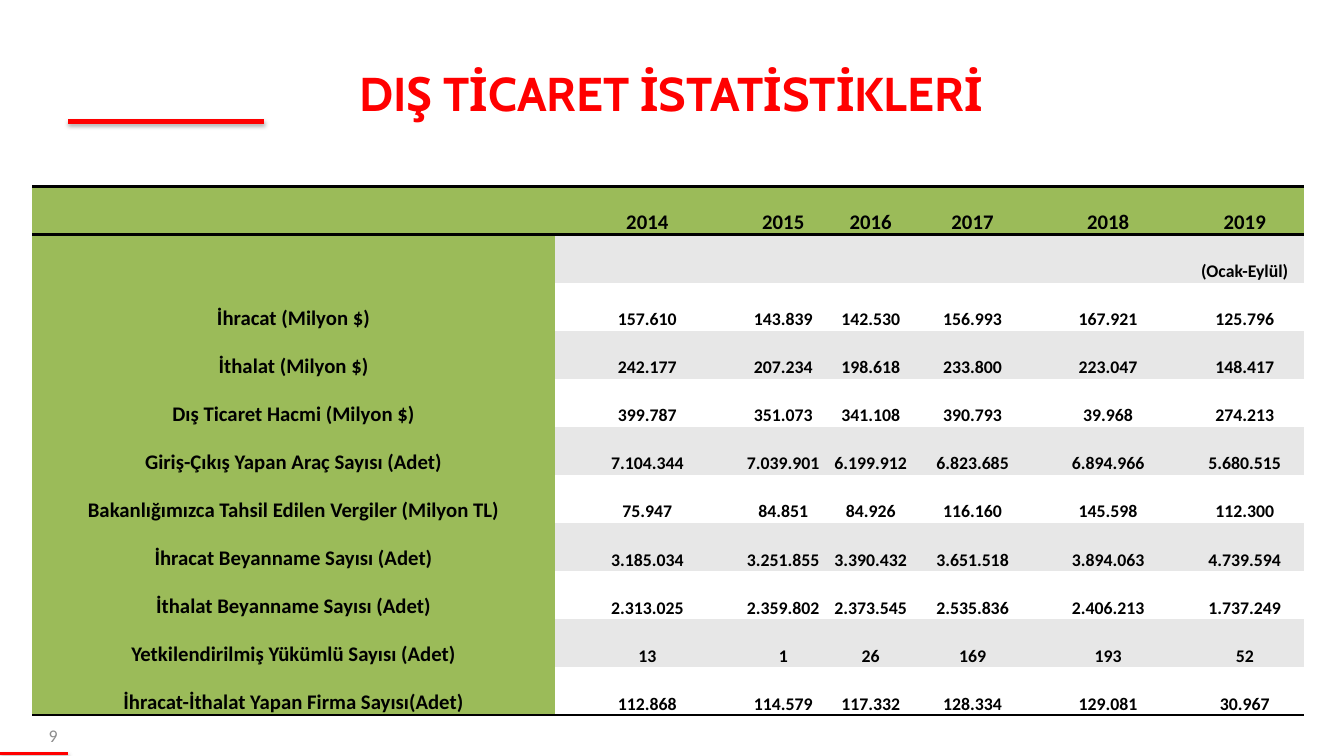
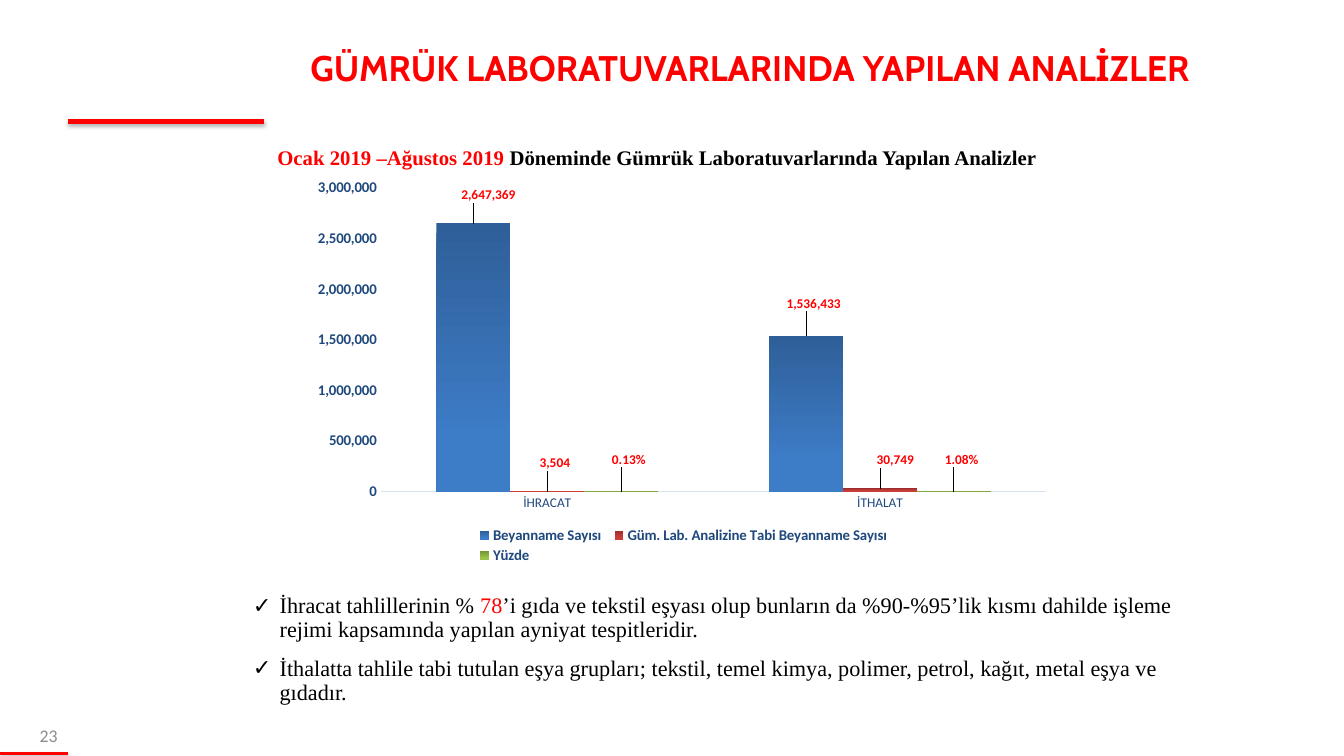
import dataclasses
import typing

import pptx
import pptx.chart.data
import pptx.dml.color
import pptx.enum.chart
import pptx.enum.shapes
import pptx.enum.text
import pptx.oxml
import pptx.oxml.ns
import pptx.util

Pt = pptx.util.Pt
ALIGN = pptx.enum.text.PP_ALIGN
ANCHOR = pptx.enum.text.MSO_ANCHOR
CHART = pptx.enum.chart

HEX = {
    "red": "FF0000", "black": "000000", "white": "FFFFFF", "green": "9BBB59",
    "band": "E7E7E7", "gray": "8C8C8C", "navy": "1F497D", "pale": "D4E3F4",
}
PLAIN_GRID = "{2D5ABB26-0587-4C30-8999-92F81FD0307C}"


class Box(typing.NamedTuple):
    left: float
    top: float
    width: float
    height: float


class Look(typing.NamedTuple):
    face: str
    size: float
    tint: str
    bold: bool = False


class Part(typing.NamedTuple):
    text: str
    look: Look


@dataclasses.dataclass
class Rule:
    start: float
    end: float
    top: float
    width: float
    alpha: int
    drop: float


@dataclasses.dataclass
class Group:
    name: str
    values: tuple[float, ...]
    form: str
    dark: str
    light: str
    shifts: tuple[tuple[float, float], ...]


RULES = [Rule(46, 178.5, 82, 3, 35, 1.8), Rule(0, 46, 509, 2, 38, 1.6)]
HEADS = ["", "2014", "2015", "2016", "2017", "2018", "2019"]
ROWS = [
    HEADS,
    [""] * 6 + ["(Ocak-Eylül)"],
    ["İhracat (Milyon $)", "157.610", "143.839", "142.530", "156.993", "167.921", "125.796"],
    ["İthalat (Milyon $)", "242.177", "207.234", "198.618", "233.800", "223.047", "148.417"],
    ["Dış Ticaret Hacmi (Milyon $)", "399.787", "351.073", "341.108", "390.793", "39.968", "274.213"],
    ["Giriş-Çıkış Yapan Araç Sayısı (Adet)", "7.104.344", "7.039.901", "6.199.912", "6.823.685",
     "6.894.966", "5.680.515"],
    ["Bakanlığımızca Tahsil Edilen Vergiler (Milyon TL)", "75.947", "84.851", "84.926", "116.160",
     "145.598", "112.300"],
    ["İhracat Beyanname Sayısı (Adet)", "3.185.034", "3.251.855", "3.390.432", "3.651.518",
     "3.894.063", "4.739.594"],
    ["İthalat Beyanname Sayısı (Adet)", "2.313.025", "2.359.802", "2.373.545", "2.535.836",
     "2.406.213", "1.737.249"],
    ["Yetkilendirilmiş Yükümlü Sayısı (Adet)", "13", "1", "26", "169", "193", "52"],
    ["İhracat-İthalat Yapan Firma Sayısı(Adet)", "112.868", "114.579", "117.332", "128.334",
     "129.081", "30.967"],
]
WIDTHS = [353, 124.5, 59, 59, 78.5, 104.5, 80]
ROW = 32.45

GROUPS = [
    Group("Beyanname Sayısı", (2647369, 1536433), "#,##0", "2F5F99", "3D7CC7",
          ((0.02, -0.04), (0.01, -0.05))),
    Group("Güm. Lab. Analizine Tabi Beyanname Sayısı", (3504, 30749), "#,##0", "9C2F2D", "CB3E3A",
          ((0.01, -0.04), (0.02, -0.04))),
    Group("Yüzde", (0.0013, 0.0108), "0.00%", "779737", "9BC348",
          ((0.01, -0.05), (0.01, -0.05))),
]

BODY = Look("Times New Roman", 15, "black")
MARK = BODY._replace(tint="red")
LEAD = Look("Times New Roman", 14, "black", True)
POINTS = [
    [Part("İhracat tahlillerinin % ", BODY), Part("78", MARK),
     Part("’i gıda ve tekstil eşyası olup bunların da %90-%95’lik kısmı dahilde işleme "
          "rejimi kapsamında yapılan ayniyat tespitleridir.", BODY)],
    [Part("İthalatta tahlile tabi tutulan eşya grupları; tekstil, temel kimya, polimer, petrol, "
          "kağıt, metal eşya ve gıdadır.", BODY)],
]


def put(target: typing.Any, **form: typing.Any) -> None:
    """Set each named attribute on the target."""
    for key, value in form.items():
        setattr(target, key, value)


def shade(name: str) -> pptx.dml.color.RGBColor:
    return pptx.dml.color.RGBColor.from_string(HEX.get(name, name))


def style(font: typing.Any, look: Look) -> None:
    put(font, name=look.face, size=Pt(look.size), bold=look.bold)
    font.color.rgb = shade(look.tint)


def node(tag: str, inner: str = "", extra: str = "") -> typing.Any:
    """Build one XML element."""
    space = pptx.oxml.ns.nsdecls(tag.split(":")[0])
    return pptx.oxml.parse_xml(f"<{tag} {space} {extra}>{inner}</{tag}>")


def place(shape: typing.Any, box: Box) -> None:
    put(shape, **{key: Pt(value) for key, value in box._asdict().items()})


def write(para: typing.Any, parts: list[Part]) -> None:
    for part in parts:
        run = para.add_run()
        run.text = part.text
        style(run.font, part.look)


def label(slide: typing.Any, box: Box, parts: list[Part], **form: typing.Any) -> None:
    """Add a text box of one paragraph, centred in height."""
    shape = slide.shapes.add_textbox(*map(Pt, box))
    put(shape.text_frame, word_wrap=True, vertical_anchor=ANCHOR.MIDDLE)
    para = shape.text_frame.paragraphs[0]
    put(para, **form)
    write(para, parts)


def start(deck: typing.Any, plan: int, title: str, size: float, box: Box, page: str) -> typing.Any:
    """Add a slide with its title and page number."""
    slide = deck.slides.add_slide(deck.slide_layouts[plan])
    head = slide.shapes.title
    place(head, box)
    put(head.text_frame, word_wrap=True, vertical_anchor=ANCHOR.MIDDLE,
        auto_size=pptx.enum.text.MSO_AUTO_SIZE.NONE)
    para = head.text_frame.paragraphs[0]
    para.alignment = ALIGN.CENTER
    write(para, [Part(title, Look("Cabin", size, "red", True))])
    label(slide, Box(0, 483, 46, 27.5), [Part(page, Look("Calibri", 12, "gray"))],
          alignment=ALIGN.RIGHT)
    return slide


def trim(deck: typing.Any, slide: typing.Any) -> None:
    """Put the red rules on the master that all slides share."""
    for index, rule in enumerate(RULES):
        line = slide.shapes.add_connector(
            pptx.enum.shapes.MSO_CONNECTOR.STRAIGHT,
            *map(Pt, (rule.start, rule.top, rule.end, rule.top)))
        line.line.color.rgb = shade("red")
        line.line.width = Pt(rule.width)
        glow = (f'<a:outerShdw blurRad="{Pt(3.1)}" dist="{Pt(rule.drop)}" dir="5400000" '
                f'rotWithShape="0"><a:srgbClr val="{HEX["black"]}">'
                f'<a:alpha val="{rule.alpha * 1000}"/></a:srgbClr></a:outerShdw>')
        line.element.spPr.append(node("a:effectLst", glow))
        line.element.xpath(".//p:cNvPr")[0].set("id", str(50 + index))
        deck.slide_master.shapes.element.append(line.element)


def edge(cell: typing.Any, side: str) -> None:
    inner = f'<a:solidFill><a:srgbClr val="{HEX["black"]}"/></a:solidFill>'
    cell._tc.get_or_add_tcPr().insert(0, node(f"a:ln{side}", inner, f'w="{Pt(2)}"'))


def grid(slide: typing.Any) -> None:
    """Add the trade table."""
    frame = slide.shapes.add_table(
        len(ROWS), len(WIDTHS), Pt(21.6), Pt(126), Pt(sum(WIDTHS)), Pt(ROW * len(ROWS)))
    frame.element.xpath(".//a:tableStyleId")[0].text = PLAIN_GRID
    table = frame.table
    for column, width in zip(table.columns, WIDTHS):
        column.width = Pt(width)
    for r, texts in enumerate(ROWS):
        table.rows[r].height = Pt(ROW)
        for c, text in enumerate(texts):
            cell = table.cell(r, c)
            put(cell, vertical_anchor=ANCHOR.BOTTOM, margin_left=Pt(0.7), margin_right=Pt(0.7),
                margin_top=Pt(0.7), margin_bottom=0)
            head = r == 0 or c == 0
            cell.fill.solid()
            cell.fill.fore_color.rgb = shade("green" if head else "band" if r % 2 else "white")
            if r in (0, len(ROWS) - 1):
                edge(cell, "B")
            if r == 0:
                edge(cell, "T")
            para = cell.text_frame.paragraphs[0]
            para.alignment = ALIGN.CENTER
            if text:
                write(para, [Part(text, Look("Calibri", 14 if head else 12, "black", True))])


def spot(parent: typing.Any, index: int, **form: typing.Any) -> None:
    """Give a chart part a manual layout as its child at the index."""
    for old in parent.xpath("./c:layout"):
        parent.remove(old)
    inner = "".join(f'<c:{key} val="{value}"/>' for key, value in form.items())
    parent.insert(index, node("c:layout", f"<c:manualLayout>{inner}</c:manualLayout>"))


def graph(slide: typing.Any) -> None:
    """Add the column chart of the lab analyses."""
    data = pptx.chart.data.CategoryChartData()
    data.categories = ["İHRACAT", "İTHALAT"]
    for group in GROUPS:
        data.add_series(group.name, group.values, group.form)
    chart = slide.shapes.add_chart(
        CHART.XL_CHART_TYPE.COLUMN_CLUSTERED, *map(Pt, (206, 116, 510.5, 270)), data).chart
    put(chart, has_title=False, has_legend=True)
    style(chart.font, Look("Calibri", 10, "black"))
    put(chart.legend, position=CHART.XL_LEGEND_POSITION.BOTTOM, include_in_layout=False)
    bold = Look("Calibri", 10, "navy", True)
    style(chart.legend.font, bold)

    scale, base = chart.value_axis, chart.category_axis
    for axis, look in ((scale, bold), (base, Look("Calibri", 9, "navy"))):
        put(axis, has_major_gridlines=False, major_tick_mark=CHART.XL_TICK_MARK.NONE,
            minor_tick_mark=CHART.XL_TICK_MARK.NONE)
        style(axis.tick_labels.font, look)
    put(scale, minimum_scale=0, maximum_scale=3000000, major_unit=500000)
    put(scale.tick_labels, number_format="#,##0", number_format_is_linked=False)
    scale.format.line.fill.background()
    base.format.line.color.rgb = shade("pale")
    base.format.line.width = Pt(0.75)

    plot = chart.plots[0]
    put(plot, gap_width=150, overlap=0, vary_by_categories=False)
    tag = Look("Calibri", 9, "red", True)
    for series, group in zip(plot.series, GROUPS):
        fill = series.format.fill
        fill.gradient()
        fill.gradient_angle = 270
        for stop, tint, where in zip(fill.gradient_stops, (group.dark, group.light), (0, 0.8)):
            stop.color.rgb = shade(tint)
            stop.position = where
        put(series.data_labels, show_value=True, number_format=group.form,
            number_format_is_linked=False, position=CHART.XL_LABEL_POSITION.OUTSIDE_END)
        style(series.data_labels.font, tag)
        for index in range(len(group.values)):
            mark = series.points[index].data_label
            style(mark.font, tag)
            mark.position = CHART.XL_LABEL_POSITION.OUTSIDE_END

    root = chart.element
    shifts = [shift for group in GROUPS for shift in group.shifts]
    for mark, (x, y) in zip(root.xpath(".//c:dLbl"), shifts):
        spot(mark, 1, x=x, y=y)
    spot(root.xpath(".//c:plotArea")[0], 0, layoutTarget="inner", xMode="edge", yMode="edge",
         x=0.1, y=0.04, w=0.88, h=0.76)
    spot(root.xpath(".//c:legend")[0], 1, xMode="edge", yMode="edge", x=0.22, y=0.88, w=0.56, h=0.11)


def notes(slide: typing.Any) -> None:
    """Fill the body with ticked points."""
    body = slide.placeholders[1]
    place(body, Box(163.5, 398, 662, 85))
    put(body.text_frame, word_wrap=True, vertical_anchor=ANCHOR.TOP,
        auto_size=pptx.enum.text.MSO_AUTO_SIZE.NONE)
    for index, parts in enumerate(POINTS):
        para = body.text_frame.add_paragraph() if index else body.text_frame.paragraphs[0]
        props = para._p.get_or_add_pPr()
        props.set("marL", str(Pt(18)))
        props.set("indent", str(Pt(-18)))
        props.append(node("a:buChar", extra='char="✓"'))
        put(para, line_spacing=0.9, space_before=Pt(10 if index else 0))
        write(para, parts)


def main() -> None:
    deck = pptx.Presentation()
    put(deck, slide_width=Pt(907), slide_height=Pt(510.5))
    trade = start(deck, 5, "DIŞ TİCARET İSTATİSTİKLERİ", 32, Box(45, 20, 816, 85), "9")
    trim(deck, trade)
    grid(trade)
    lab = start(deck, 1, "GÜMRÜK LABORATUVARLARINDA YAPILAN ANALİZLER", 24,
                Box(180, 3, 652, 85), "23")
    graph(lab)
    notes(lab)
    label(lab, Box(163.5, 83.5, 560, 47.5),
          [Part("Ocak 2019 –Ağustos 2019", LEAD._replace(tint="red")),
           Part(" Döneminde Gümrük Laboratuvarlarında Yapılan Analizler", LEAD)],
          alignment=ALIGN.CENTER, line_spacing=0.9)
    deck.save("out.pptx")


if __name__ == "__main__":
    main()
